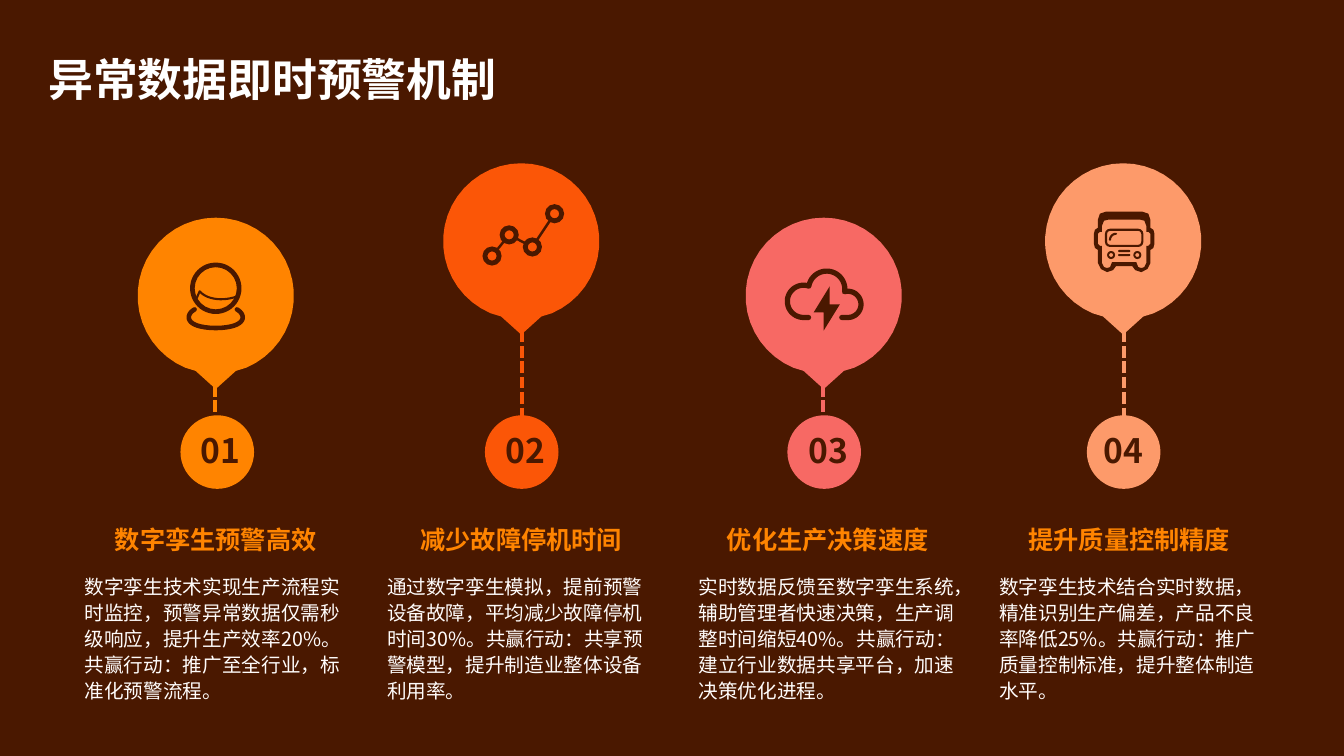
import dataclasses
import itertools
import math

import lxml.etree
import pptx
import pptx.dml.color
import pptx.enum.dml
import pptx.enum.shapes
import pptx.enum.text
import pptx.oxml.ns
import pptx.util

Inches = pptx.util.Inches
Shape = pptx.enum.shapes.MSO_SHAPE
Align = pptx.enum.text.PP_ALIGN
Anchor = pptx.enum.text.MSO_ANCHOR
qn = pptx.oxml.ns.qn


@dataclasses.dataclass(frozen=True)
class Theme:
    font: str = "Noto Sans CJK SC"
    dark: str = "4A1800"
    accent: str = "FF8400"
    title: str = "FFFFFF"
    body: str = "FFFCFB"
    pins: tuple = ("FF8400", "FB5607", "F76964", "FD9A6A")
    title_size: int = 32
    number_size: int = 24
    heading_size: int = 18
    body_size: int = 14


def rgb(code):
    return pptx.dml.color.RGBColor.from_string(code)


def arc(x, y, radius, start, end, steps=40):
    angles = [math.radians(start + (end - start) * i / steps) for i in range(steps + 1)]
    return [(x + radius * math.cos(a), y + radius * math.sin(a)) for a in angles]


def curve(*controls, steps=16):
    points = []
    for i in range(steps + 1):
        t = i / steps
        weights = ((1 - t) ** 3, 3 * t * (1 - t) ** 2, 3 * t * t * (1 - t), t ** 3)
        points.append(tuple(sum(w * p[k] for w, p in zip(weights, controls)) for k in (0, 1)))
    return points


def mirror(axis, half):
    right = [(axis + dx, y) for dx, y in half]
    left = [(axis - dx, y) for dx, y in reversed(half)]
    return right + left


class Canvas:
    """Draws styled elements on the current slide."""

    def __init__(self, theme, page):
        self.theme = theme
        self.page = page
        self.layer = page.shapes
        page.background.fill.solid()
        page.background.fill.fore_color.rgb = rgb(theme.dark)

    def start_group(self):
        self.layer = self.page.shapes.add_group_shape().shapes

    def end_group(self):
        self.layer = self.page.shapes

    def paint(self, shape, color, stroke=None):
        shape.shadow.inherit = False
        if stroke:
            shape.fill.background()
            shape.line.color.rgb = rgb(color)
            shape.line.width = pptx.util.Pt(stroke)
            shape.element.spPr.find(qn("a:ln")).set("cap", "rnd")
        else:
            shape.fill.solid()
            shape.fill.fore_color.rgb = rgb(color)
            shape.line.fill.background()

    def preset(self, kind, box, color, adjust=None, stroke=None):
        shape = self.layer.add_shape(kind, *map(Inches, box))
        if adjust is not None:
            shape.adjustments[0] = adjust
        self.paint(shape, color, stroke)

    def ring(self, x, y, size, adjust):
        self.preset(Shape.DONUT, (x - size / 2, y - size / 2, size, size), self.theme.dark, adjust)

    def outline(self, contours, color, stroke=None):
        closed = stroke is None
        paths = [[(Inches(x), Inches(y)) for x, y in contour] for contour in contours]
        builder = self.layer.build_freeform(*paths[0][0])
        builder.add_line_segments(paths[0][1:], close=closed)
        for path in paths[1:]:
            builder.move_to(*path[0])
            builder.add_line_segments(path[1:], close=closed)
        self.paint(builder.convert_to_shape(), color, stroke)

    def line(self, start, end, color, width, dash=None):
        straight = pptx.enum.shapes.MSO_CONNECTOR.STRAIGHT
        connector = self.layer.add_connector(straight, *map(Inches, (*start, *end)))
        connector.line.color.rgb = rgb(color)
        connector.line.width = pptx.util.Pt(width)
        if dash:
            connector.line.dash_style = dash
        lxml.etree.SubElement(connector.element.spPr, qn("a:effectLst"))

    def text(self, box, words, size, color, bold=False, align=Align.LEFT,
             anchor=Anchor.TOP, spacing=None, around=None, insets=(0.1, 0.05)):
        frame = self.layer.add_textbox(*map(Inches, box)).text_frame
        frame.word_wrap = True
        frame.vertical_anchor = anchor
        frame.margin_left = frame.margin_right = Inches(insets[0])
        frame.margin_top = frame.margin_bottom = Inches(insets[1])
        para = frame.paragraphs[0]
        para.alignment = align
        if spacing:
            para.line_spacing = spacing
        if around:
            para.space_before = para.space_after = pptx.util.Pt(around)
        span = para.add_run()
        span.text = words
        span.font.size = pptx.util.Pt(size)
        span.font.bold = bold
        span.font.color.rgb = rgb(color)
        span.font.name = self.theme.font
        east = lxml.etree.SubElement(span._r.get_or_add_rPr(), qn("a:ea"))
        east.set("typeface", self.theme.font)

    def pin(self, x, top, color):
        bulb = arc(x, top + 0.775, 0.775, 113, 427)
        tail = [(x + 0.2, top + 1.52), (x, top + 1.7), (x - 0.2, top + 1.52)]
        self.outline([bulb + tail], color)


def draw_astronaut(canvas):
    dark = canvas.theme.dark
    canvas.start_group()
    canvas.ring(2.14, 2.86, 0.51, 0.09)
    visor = [(1.95, 2.96), (1.98, 2.89)]
    visor += curve((1.98, 2.89), (2.05, 2.97), (2.2, 2.99), (2.34, 2.945))
    canvas.outline([visor], dark, 1.5)
    collar = curve((1.93, 3.07), (1.84, 3.12), (1.82, 3.25), (2.14, 3.255))
    collar += curve((2.14, 3.255), (2.46, 3.25), (2.44, 3.12), (2.35, 3.07))[1:]
    canvas.outline([collar], dark, 3.25)
    canvas.end_group()


def draw_trend(canvas):
    nodes = [(4.88, 2.54), (5.05, 2.33), (5.28, 2.45), (5.5, 2.12)]
    canvas.start_group()
    for (x1, y1), (x2, y2) in itertools.pairwise(nodes):
        trim = 0.08 / math.hypot(x2 - x1, y2 - y1)
        dx, dy = (x2 - x1) * trim, (y2 - y1) * trim
        canvas.line((x1 + dx, y1 + dy), (x2 - dx, y2 - dy), canvas.theme.dark, 1.75)
    for x, y in nodes:
        canvas.ring(x, y, 0.19, 0.26)
    canvas.end_group()


def draw_cloud(canvas):
    dark = canvas.theme.dark
    cloud = [(8.35, 3.15)] + arc(8.41, 3.02, 0.13, 90, -105)
    cloud += arc(8.2, 2.87, 0.18, 5, -170) + arc(7.97, 2.99, 0.16, -72, -270) + [(8.02, 3.15)]
    bolt = [(8.33, 3.02), (8.23, 3.02), (8.23, 2.84), (8.07, 3.1), (8.17, 3.1), (8.17, 3.28)]
    canvas.start_group()
    canvas.outline([cloud], dark, 3.75)
    canvas.outline([bolt], dark)
    canvas.end_group()


def draw_bus(canvas):
    dark, axis = canvas.theme.dark, 11.15
    body = [(0, 2.1), (0.18, 2.1), (0.24, 2.12), (0.26, 2.18), (0.26, 2.26), (0.29, 2.28),
            (0.3, 2.32), (0.3, 2.42), (0.29, 2.46), (0.26, 2.48), (0.26, 2.61), (0.23, 2.67),
            (0.17, 2.7), (0.11, 2.68), (0.08, 2.64), (0, 2.64)]
    cabin = [(0, 2.18), (0.16, 2.18), (0.2, 2.19), (0.22, 2.24), (0.22, 2.3), (0.24, 2.3),
             (0.26, 2.32), (0.26, 2.42), (0.24, 2.44), (0.22, 2.44), (0.22, 2.61),
             (0.2, 2.65), (0.17, 2.66), (0.14, 2.65), (0.12, 2.6), (0, 2.6)]
    canvas.start_group()
    canvas.outline([mirror(axis, body), mirror(axis, cabin)], dark)
    canvas.preset(Shape.ROUNDED_RECTANGLE, (10.97, 2.28, 0.36, 0.16), dark, 0.25, 1.5)
    canvas.outline([arc(11.07, 2.38, 0.06, 180, 270)], dark, 1.5)
    for side in (-0.13, 0.13):
        canvas.ring(axis + side, 2.53, 0.08, 0.25)
    for top in (2.48, 2.52):
        canvas.preset(Shape.ROUNDED_RECTANGLE, (axis - 0.06, top, 0.12, 0.02), dark, 0.5)
    canvas.end_group()


STEPS = [
    (2.14, 2.16, 2.13, 1.79, 1.89, 0.76, 0.77, 2.74, draw_astronaut, "数字孪生预警高效",
     "数字孪生技术实现生产流程实时监控，预警异常数据仅需秒级响应，提升生产效率20%。共赢行动：推广至全行业，标准化预警流程。"),
    (5.17, 1.62, 5.18, 4.81, 4.92, 3.76, 3.76, 2.82, draw_trend, "减少故障停机时间",
     "通过数字孪生模拟，提前预警设备故障，平均减少故障停机时间30%。共赢行动：共享预警模型，提升制造业整体设备利用率。"),
    (8.17, 2.16, 8.16, 7.81, 7.92, 6.85, 6.83, 2.76, draw_cloud, "优化生产决策速度",
     "实时数据反馈至数字孪生系统，辅助管理者快速决策，生产调整时间缩短40%。共赢行动：建立行业数据共享平台，加速决策优化进程。"),
    (11.14, 1.62, 11.15, 10.78, 10.85, 9.83, 9.82, 2.76, draw_bus, "提升质量控制精度",
     "数字孪生技术结合实时数据，精准识别生产偏差，产品不良率降低25%。共赢行动：推广质量控制标准，提升整体制造水平。"),
]


def main():
    deck = pptx.Presentation()
    deck.slide_width, deck.slide_height = Inches(13.33), Inches(7.5)
    theme = Theme()
    canvas = Canvas(theme, deck.slides.add_slide(deck.slide_layouts[6]))
    dash = pptx.enum.dml.MSO_LINE.SQUARE_DOT
    for number, (color, step) in enumerate(zip(theme.pins, STEPS), 1):
        x, top, stem, disc, label, body, head, width, draw_icon, heading, words = step
        canvas.line((stem, top + 1.66), (stem, 4.35), color, 2.75, dash)
        canvas.pin(x, top, color)
        canvas.preset(Shape.OVAL, (disc, 4.12, 0.73, 0.73), color)
        draw_icon(canvas)
        canvas.text((label, 4.22, 0.61, 0.5), f"{number:02}", theme.number_size, theme.dark, True)
        canvas.text((body, 5.64, 2.74, 1.45), words, theme.body_size, theme.body,
                    spacing=1.1, around=3, insets=(0.08, 0.04))
        canvas.text((head, 5.15, width, 0.4), heading, theme.heading_size, theme.accent,
                    True, Align.CENTER, Anchor.MIDDLE)
    canvas.text((0.38, 0.33, 12.57, 0.79), "异常数据即时预警机制", theme.title_size, theme.title,
                True, anchor=Anchor.MIDDLE, spacing=1.2)
    deck.save("out.pptx")


if __name__ == "__main__":
    main()
